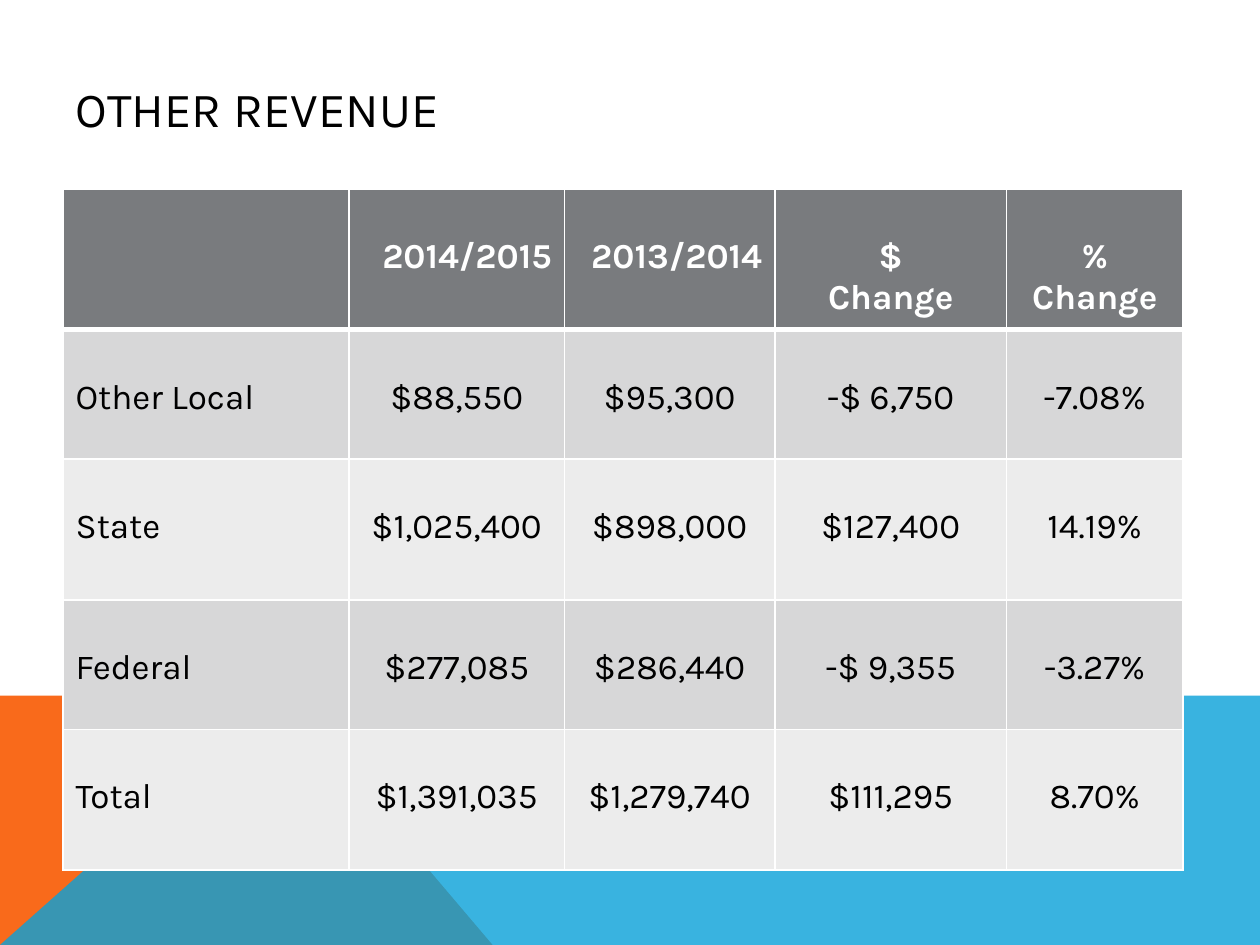
"""Build the Other Revenue slide: a title and a table over two colour bands."""
from dataclasses import dataclass

from lxml import etree
from pptx import Presentation
from pptx import util as u
from pptx.dml.color import RGBColor
from pptx.enum import text
from pptx.oxml import ns

ALIGN = text.PP_ALIGN


@dataclass(frozen=True)
class Theme:
    font: str = "Karla"
    title_size: int = 28
    table_size: int = 20
    ink: str = "000000"
    white: str = "FFFFFF"
    header: str = "797B7E"
    bands: tuple = ("D7D7D8", "ECECEC")
    orange: str = "F96A1B"
    blue: str = "08A1D9"
    rule: int = 1
    header_rule: int = 3


class Deck:
    def __init__(self, prs, theme):
        self.prs, self.theme = prs, theme
        self.s = prs.slides.add_slide(prs.slide_layouts[5])

    def x(self, share):
        return round(self.prs.slide_width * share)

    def y(self, share):
        return round(self.prs.slide_height * share)

    def box(self, left, top, width, height):
        return self.x(left), self.y(top), self.x(width), self.y(height)

    def style(self, p, size, color, align, bold=False):
        p.alignment = align
        for r in p.runs:
            r.font.name, r.font.size, r.font.bold = self.theme.font, u.Pt(size), bold
            r.font.color.rgb = RGBColor.from_string(color)

    def title(self, words, box):
        sp = self.s.shapes.title
        sp.left, sp.top, sp.width, sp.height = self.box(*box)
        tf = sp.text_frame
        tf.text = words
        tf.word_wrap = True
        tf.auto_size = text.MSO_AUTO_SIZE.NONE
        tf.vertical_anchor = text.MSO_ANCHOR.MIDDLE
        self.style(tf.paragraphs[0], self.theme.title_size, self.theme.ink, ALIGN.LEFT)

    def band(self, points, color, opacity=100):
        start, *rest = [(self.x(px), self.y(py)) for px, py in points]
        fb = self.s.shapes.build_freeform(*start)
        fb.add_line_segments(rest, close=True)
        sp = fb.convert_to_shape()
        sp.shadow.inherit = False
        sp.line.fill.background()
        sp.fill.solid()
        sp.fill.fore_color.rgb = RGBColor.from_string(color)
        if opacity < 100:
            clr = sp.fill._xPr.find(".//" + ns.qn("a:srgbClr"))
            etree.SubElement(clr, ns.qn("a:alpha"), val=str(opacity * 1000))

    def border(self, cell, side, width):
        ln = etree.SubElement(cell._tc.get_or_add_tcPr(), ns.qn("a:ln" + side), w=str(u.Pt(width)))
        fill = etree.SubElement(ln, ns.qn("a:solidFill"))
        etree.SubElement(fill, ns.qn("a:srgbClr"), val=self.theme.white)

    def cell(self, cell, words, row, align):
        t = self.theme
        head = row == 0
        thick = {0: "B", 1: "T"}.get(row)
        for side in "LRTB":
            self.border(cell, side, t.header_rule if side == thick else t.rule)
        cell.fill.solid()
        cell.fill.fore_color.rgb = RGBColor.from_string(t.header if head else t.bands[(row - 1) % 2])
        cell.margin_top = self.y(0.05)
        cell.text_frame.text = words
        for p in cell.text_frame.paragraphs:
            self.style(p, t.table_size, t.white if head else t.ink, align, head)

    def table(self, rows, left, top, widths, heights):
        box = self.box(left, top, sum(widths), sum(heights))
        tbl = self.s.shapes.add_table(len(rows), len(widths), *box).table
        for col, width in zip(tbl.columns, widths):
            col.width = self.x(width)
        for row, height in zip(tbl.rows, heights):
            row.height = self.y(height)
        for i, row in enumerate(rows):
            for j, words in enumerate(row):
                align = ALIGN.LEFT if j == 0 else ALIGN.RIGHT if i == 0 and j < 3 else ALIGN.CENTER
                self.cell(tbl.cell(i, j), words, i, align)


REVENUE = [
    ("", "2014/2015", "2013/2014", "$\nChange", "%\nChange"),
    ("Other Local", "$88,550", "$95,300", "-$ 6,750", "-7.08%"),
    ("State", "$1,025,400", "$898,000", "$127,400", "14.19%"),
    ("Federal", "$277,085", "$286,440", "-$ 9,355", "-3.27%"),
    ("Total", "$1,391,035", "$1,279,740", "$111,295", "8.70%"),
]


def main():
    prs = Presentation()
    prs.slide_width, prs.slide_height = u.Inches(10), u.Inches(7.5)
    theme = Theme()
    deck = Deck(prs, theme)
    top, peak = 0.736, 0.223
    deck.band([(0, 1), (0, top), (peak, top), (0.391, 1)], theme.orange)
    deck.band([(0, 1), (peak, top), (1, top), (1, 1)], theme.blue, opacity=80)
    deck.title("OTHER REVENUE", (0.05, 0.04, 0.833, 0.149))
    tall, short = 0.149, 0.137
    deck.table(REVENUE, 0.05, 0.2, (0.227, 0.171, 0.167, 0.184, 0.14), (tall, short, tall, short, tall))
    prs.save("out.pptx")


if __name__ == "__main__":
    main()
